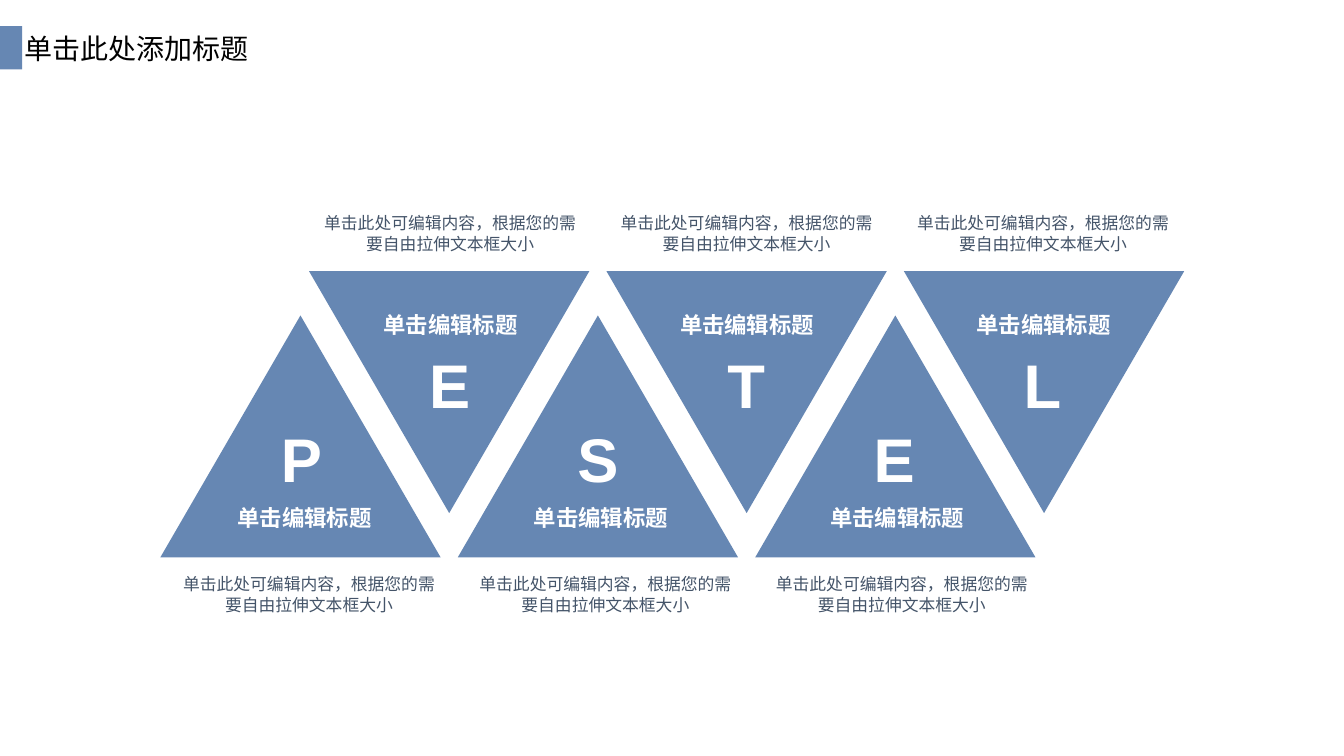
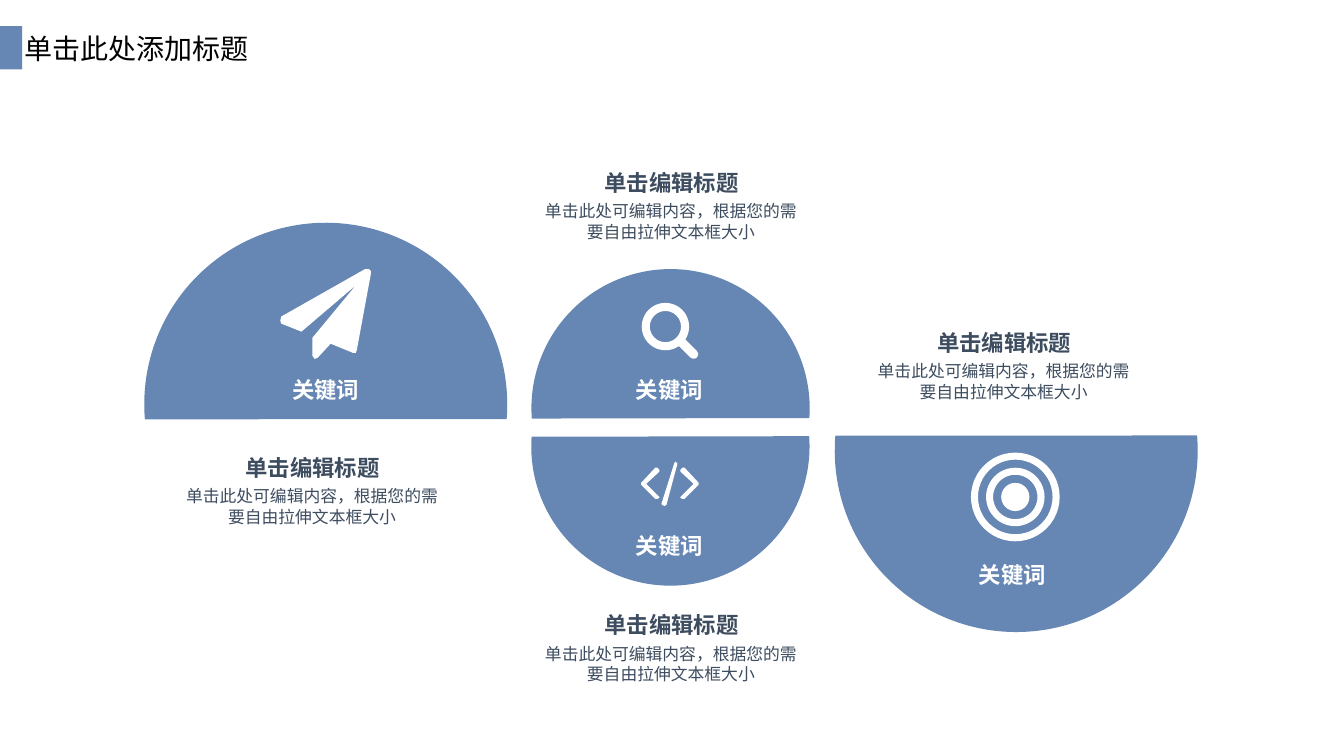
from dataclasses import dataclass

from lxml import etree
from pptx import Presentation
from pptx.dml.color import RGBColor
from pptx.enum.shapes import MSO_SHAPE as Preset
from pptx.enum.text import MSO_ANCHOR as Anchor, PP_ALIGN as Align
from pptx.oxml.ns import qn
from pptx.util import Inches, Pt


@dataclass(frozen=True)
class Theme:
    blue: str = "6687B3"
    white: str = "FFFFFF"
    black: str = "000000"
    slate: str = "445469"
    dark_slate: str = "3D4C5F"
    latin_font: str = "Arial"
    chinese_font: str = "Noto Sans CJK SC"
    body_size: int = 12
    heading_size: int = 16
    title_size: int = 20
    letter_size: int = 44
    line_height: float = 1.22


THEME = Theme()
TITLE = "单击此处添加标题"
HEADING = "单击编辑标题"
BODY = "单击此处可编辑内容，根据您的需要自由拉伸文本框大小"
KEYWORD = "关键词"

HEADING_FORMAT = {"size": Pt(THEME.heading_size), "bold": True}
BODY_FORMAT = {"size": Pt(THEME.body_size)}
LETTER_FORMAT = {"size": Pt(THEME.letter_size), "bold": True}
TITLE_FORMAT = {"size": Pt(THEME.title_size), "name": THEME.chinese_font}


def paint(shape, color):
    shape.shadow.inherit = False
    shape.fill.solid()
    shape.fill.fore_color.rgb = RGBColor.from_string(color)
    shape.line.fill.background()


def add_preset(slide, preset, left, top, width, height, color, rotation=0, adjustments=()):
    shape = slide.shapes.add_shape(
        preset, Inches(left), Inches(top), Inches(width), Inches(height))
    paint(shape, color)
    shape.rotation = rotation
    for index, value in enumerate(adjustments):
        shape.adjustments[index] = value
    return shape


def add_outline(slide, contours, color):
    """Draw one freeform from closed contours of (x, y) points in inches."""
    contours = [[(Inches(x), Inches(y)) for x, y in points] for points in contours]
    builder = slide.shapes.build_freeform(*contours[0][0])
    for number, points in enumerate(contours):
        if number:
            builder.move_to(*points[0])
        builder.add_line_segments(points[1:], close=True)
    paint(builder.convert_to_shape(), color)


def add_run(para, text, color, formats):
    span = para.add_run()
    span.text = text
    span.font.color.rgb = RGBColor.from_string(color)
    for name, value in ({"name": THEME.latin_font} | formats).items():
        setattr(span.font, name, value)
    east_asian = etree.SubElement(span.font._element, qn("a:ea"))
    east_asian.set("typeface", THEME.chinese_font)


def add_label(slide, text, left, top, width, height, color, formats):
    """Add a centred text box without insets."""
    box = slide.shapes.add_textbox(Inches(left), Inches(top), Inches(width), Inches(height))
    frame = box.text_frame
    frame_format = {"word_wrap": True, "margin_left": 0, "margin_top": 0,
                    "margin_right": 0, "margin_bottom": 0}
    for name, value in frame_format.items():
        setattr(frame, name, value)
    para = frame.paragraphs[0]
    para.alignment = Align.CENTER
    para.line_spacing = Pt(formats["size"].pt * THEME.line_height)
    add_run(para, text, color, formats)


def add_heading(slide, left, top, color):
    add_label(slide, HEADING, left, top, 2.56, 0.27, color, HEADING_FORMAT)


def add_body(slide, left, top, color):
    add_label(slide, BODY, left, top, 2.55, 0.4, color, BODY_FORMAT)


def add_titled_slide(deck):
    slide = deck.slides.add_slide(deck.slide_layouts[6])
    add_preset(slide, Preset.RECTANGLE, 0, 0.26, 0.22, 0.43, THEME.blue)
    box = slide.shapes.add_textbox(Inches(0.14), Inches(0.26), Inches(2.56), Inches(0.44))
    box.text_frame.word_wrap = True
    box.text_frame.vertical_anchor = Anchor.MIDDLE
    add_run(box.text_frame.paragraphs[0], TITLE, THEME.black, TITLE_FORMAT)
    return slide


def add_pestel_slide(deck):
    slide = add_titled_slide(deck)
    triangle_step, text_step = 2.95 / 2, 1.47
    upright = {"top": 3.13, "rotation": 0, "letter": 4.16, "heading": (1.74, 5), "body": (1.79, 5.69)}
    inverted = {"top": 2.69, "rotation": 180, "letter": 3.43, "heading": (1.72, 3.08), "body": (1.72, 2.11)}
    for index, letter in enumerate("PESTEL"):
        row = inverted if index % 2 else upright
        add_preset(slide, Preset.ISOSCELES_TRIANGLE, 1.59 + index * triangle_step,
                   row["top"], 2.78, 2.4, THEME.blue, row["rotation"])
        shift = index * text_step
        add_label(slide, letter, 2.62 + shift, row["letter"], 0.74, 0.74,
                  THEME.white, LETTER_FORMAT)
        left, top = row["heading"]
        add_heading(slide, left + shift, top, THEME.white)
        left, top = row["body"]
        add_body(slide, left + shift, top, THEME.slate)


def add_plane_icon(slide):
    plane = [(3.68, 2.71), (3.54, 3.47), (3.53, 3.5), (3.5, 3.5), (3.28, 3.41),
             (3.15, 3.55), (3.12, 3.56), (3.1, 3.53), (3.1, 3.35), (3.53, 2.83),
             (2.99, 3.29), (2.79, 3.21), (2.78, 3.18), (2.79, 3.14), (3.62, 2.67),
             (3.66, 2.67), (3.68, 2.69)]
    add_outline(slide, [plane], THEME.white)


def add_code_icon(slide):
    middle = 6.645
    left_bracket = [(6.52, 4.95), (6.5, 4.95), (6.36, 4.81), (6.36, 4.79), (6.5, 4.64),
                    (6.52, 4.64), (6.54, 4.66), (6.54, 4.68), (6.41, 4.8),
                    (6.54, 4.93), (6.54, 4.94)]
    right_bracket = [(2 * middle - x, y) for x, y in left_bracket]
    slash = [(6.61, 5.01), (6.59, 5.02), (6.57, 5.01), (6.56, 5), (6.69, 4.59),
             (6.7, 4.58), (6.71, 4.59), (6.72, 4.6)]
    add_outline(slide, [left_bracket, slash, right_bracket], THEME.white)


def add_ring(slide, center_x, center_y, diameter, thickness):
    radius = diameter / 2
    add_preset(slide, Preset.DONUT, center_x - radius, center_y - radius, diameter,
               diameter, THEME.white, adjustments=[thickness / diameter])


def add_magnifier_icon(slide):
    add_ring(slide, 6.6, 3.24, 0.47, 0.08)
    add_preset(slide, Preset.ROUNDED_RECTANGLE, 6.69, 3.41, 0.26, 0.09,
               THEME.white, rotation=45, adjustments=[0.5])


def add_target_icon(slide):
    center_x, center_y = 10.07, 4.93
    for diameter in (0.88, 0.58):
        add_ring(slide, center_x, center_y, diameter, 0.07)
    add_preset(slide, Preset.OVAL, center_x - 0.14, center_y - 0.14, 0.28, 0.28, THEME.white)


def add_keyword_slide(deck):
    slide = add_titled_slide(deck)
    facing_up, facing_down = 111, 291
    large, small = (3.6, [38.53, 152.23]), (2.76, [38.83, 151.83])
    domes = [
        (1.43, 2.21, large, facing_up, (2.48, 3.73), (1.82, 4.5)),
        (8.28, 2.67, large, facing_down, (9.29, 5.56), (8.68, 3.26)),
        (5.27, 2.67, small, facing_up, (5.89, 3.73), (5.38, 1.67)),
        (5.27, 3.05, small, facing_down, (5.89, 5.27), (5.38, 6.06)),
    ]
    for left, top, (diameter, angles), rotation, keyword, heading in domes:
        add_preset(slide, Preset.CHORD, left, top, diameter, diameter, THEME.blue,
                   rotation, angles)
        add_label(slide, KEYWORD, *keyword, 1.5, 0.27, THEME.white, HEADING_FORMAT)
        add_heading(slide, *heading, THEME.dark_slate)
        add_body(slide, heading[0], heading[1] + 0.32, THEME.dark_slate)
    for add_icon in (add_plane_icon, add_code_icon, add_magnifier_icon, add_target_icon):
        add_icon(slide)


def main():
    deck = Presentation()
    deck.slide_width, deck.slide_height = Inches(13.33), Inches(7.5)
    add_pestel_slide(deck)
    add_keyword_slide(deck)
    deck.save("out.pptx")


if __name__ == "__main__":
    main()
